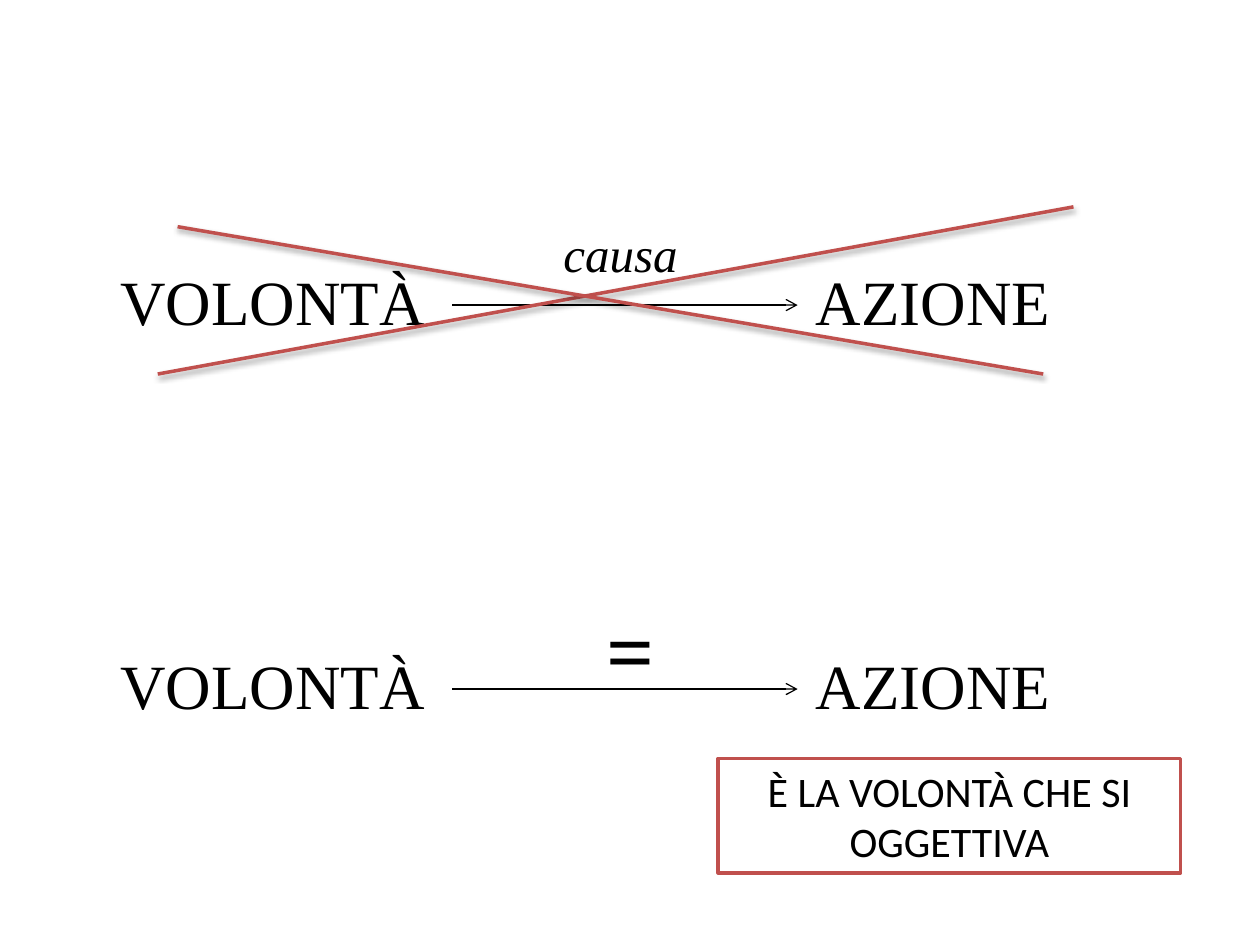
from dataclasses import dataclass

from lxml import etree
from pptx import Presentation
from pptx.dml.color import RGBColor
from pptx.enum.shapes import MSO_CONNECTOR, MSO_SHAPE
from pptx.enum.text import MSO_ANCHOR, MSO_AUTO_SIZE, PP_ALIGN
from pptx.oxml.ns import qn
from pptx.util import Cm, Pt

STRAIGHT = MSO_CONNECTOR.STRAIGHT
RECTANGLE = MSO_SHAPE.RECTANGLE
MIDDLE = MSO_ANCHOR.MIDDLE
GROW = MSO_AUTO_SIZE.SHAPE_TO_FIT_TEXT
LEFT, CENTER = PP_ALIGN.LEFT, PP_ALIGN.CENTER

COLORS = {"text": "000000", "accent": "C0504D", "paper": "FFFFFF"}
SERIF, SANS = "Times New Roman", "Calibri"
ACTION_TAB = 14.02
ARROW_DROP = 0.99


@dataclass(frozen=True)
class Label:
    """A text with its frame in centimetres and its size in points."""
    text: str
    left: float
    top: float
    width: float
    height: float
    size: int
    font: str = SERIF
    align: PP_ALIGN = CENTER
    bold: bool = False
    italic: bool = False


@dataclass(frozen=True)
class Segment:
    """A straight line from (x1, y1) to (x2, y2) in centimetres."""
    x1: float
    y1: float
    x2: float
    y2: float


ROW_TOPS = (5.16, 12.9)
RELATIONS = (
    Label("causa", 9.93, 4.37, 5.16, 1.45, 28, italic=True),
    Label("=", 10.11, 11.91, 5.16, 2.31, 48, bold=True, italic=True),
)
CROSS = (Segment(3.18, 7.54, 21.64, 4.17), Segment(3.58, 4.57, 21.03, 7.54))
CONCLUSION = Label("È LA VOLONTÀ CHE SI OGGETTIVA", 14.48, 15.29, 9.32, 2.31, 24, SANS)


def color(key: str) -> RGBColor:
    return RGBColor.from_string(COLORS[key])


def frame_of(label: Label) -> tuple:
    return tuple(Cm(v) for v in (label.left, label.top, label.width, label.height))


def write(shape, label: Label):
    """Fill the shape with the label's text and return the paragraph."""
    frame = shape.text_frame
    frame.word_wrap = True
    frame.auto_size = GROW
    frame.vertical_anchor = MIDDLE
    paragraph = frame.paragraphs[0]
    paragraph.alignment = label.align
    run = paragraph.add_run()
    run.text = label.text
    run.font.name = label.font
    run.font.size = Pt(label.size)
    run.font.bold = label.bold
    run.font.italic = label.italic
    run.font.color.rgb = color("text")
    return paragraph


def add_label(slide, label: Label):
    return write(slide.shapes.add_textbox(*frame_of(label)), label)


def add_line(slide, segment: Segment, color_key: str, width: float):
    """Draw a line; return it with its empty effect list."""
    ends = (Cm(v) for v in (segment.x1, segment.y1, segment.x2, segment.y2))
    line = slide.shapes.add_connector(STRAIGHT, *ends)
    line.line.color.rgb = color(color_key)
    line.line.width = Pt(width)
    effects = etree.SubElement(line._element.spPr, qn("a:effectLst"))
    return line, effects


def add_arrow(slide, segment: Segment) -> None:
    arrow, _ = add_line(slide, segment, "text", 0.75)
    etree.SubElement(arrow.line._get_or_add_ln(), qn("a:tailEnd"), type="arrow")


def add_cross_stroke(slide, segment: Segment) -> None:
    _, effects = add_line(slide, segment, "accent", 2)
    shadow = etree.SubElement(
        effects, qn("a:outerShdw"), blurRad=str(Pt(3.1)), dist=str(Pt(1.6)),
        dir="5400000", rotWithShape="0")
    tint = etree.SubElement(shadow, qn("a:srgbClr"), val=COLORS["text"])
    etree.SubElement(tint, qn("a:alpha"), val="38000")


def add_row(slide, top: float) -> None:
    """Will and action on one line, joined by an arrow."""
    paragraph = add_label(
        slide, Label("VOLONTÀ\tAZIONE", 2.18, top, 19.25, 1.8, 36, align=LEFT))
    tabs = etree.SubElement(paragraph._p.get_or_add_pPr(), qn("a:tabLst"))
    etree.SubElement(tabs, qn("a:tab"), pos=str(Cm(ACTION_TAB)), algn="l")
    arrow_y = top + ARROW_DROP
    add_arrow(slide, Segment(9.12, arrow_y, 16.08, arrow_y))


def add_conclusion(slide, label: Label) -> None:
    box = slide.shapes.add_shape(RECTANGLE, *frame_of(label))
    box.shadow.inherit = False
    box.fill.solid()
    box.fill.fore_color.rgb = color("paper")
    box.line.color.rgb = color("accent")
    box.line.width = Pt(2)
    write(box, label)


def main() -> None:
    deck = Presentation()
    deck.slide_width, deck.slide_height = Cm(25.4), Cm(19.05)
    slide = deck.slides.add_slide(deck.slide_layouts[6])
    for top in ROW_TOPS:
        add_row(slide, top)
    for relation in RELATIONS:
        add_label(slide, relation)
    for stroke in CROSS:
        add_cross_stroke(slide, stroke)
    add_conclusion(slide, CONCLUSION)
    deck.save("out.pptx")


if __name__ == "__main__":
    main()
